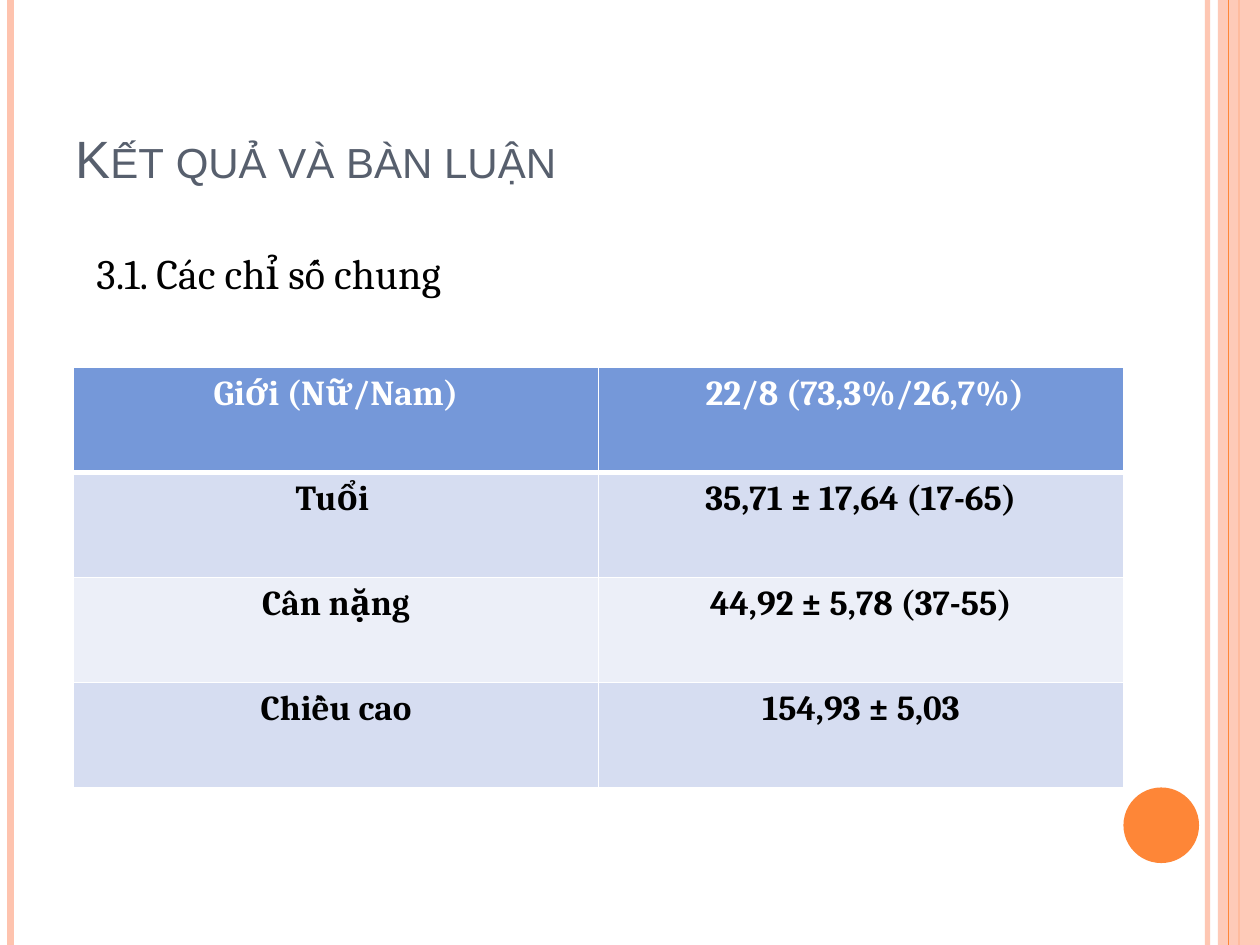
from dataclasses import dataclass

from lxml.etree import SubElement
from pptx import Presentation
from pptx.dml.color import RGBColor
from pptx.enum.shapes import MSO_CONNECTOR, MSO_SHAPE
from pptx.enum.text import MSO_ANCHOR, PP_ALIGN
from pptx.oxml.ns import qn
from pptx.util import Inches, Pt


@dataclass(frozen=True)
class Theme:
    peach: str = "FEC3AE"
    orange: str = "FE8637"
    slate: str = "575F6D"
    blue: str = "7598D9"
    bands: tuple = ("D6DDF1", "ECEFF8")
    white: str = "FFFFFF"
    black: str = "000000"
    head: str = "Arial"
    body: str = "Cambria"
    title: int = 30
    sub: int = 24
    cell: int = 20


@dataclass(frozen=True)
class Rule:
    col: int
    color: str
    width: float
    alpha: int = 100


@dataclass(frozen=True)
class Box:
    col: float
    row: float
    wide: float
    high: float

    def area(self) -> tuple:
        return tuple(unit(n) for n in (self.col, self.row, self.wide, self.high))


THEME = Theme()
COLS, ROWS = 120, 90  # grid of twelfths of an inch
BACK = (Rule(115, THEME.peach, 3, 93), Rule(1, THEME.peach, 4.5),
        Rule(118, THEME.orange, 1.5))
FRONT = (Rule(117, THEME.orange, 0.75),)
DATA = (
    ("Giới (Nữ/Nam)", " 22/8 (73,3%/26,7%)"),
    ("Tuổi ", "35,71 ± 17,64 (17-65)"),
    ("Cân nặng", "44,92 ± 5,78 (37-55)"),
    ("Chiều cao", "154,93 ± 5,03"),
)


def unit(n: float) -> int:
    return Inches(n / 12)


def rgb(color: str) -> RGBColor:
    return RGBColor.from_string(color)


def fade(props, alpha: int) -> None:
    """Set the opacity of the first solid colour, in percent."""
    if alpha < 100:
        tint = next(props.iter(qn("a:srgbClr")))
        SubElement(tint, qn("a:alpha"), val=str(alpha * 1000))


def add_rule(slide, rule: Rule) -> None:
    x = unit(rule.col)
    line = slide.shapes.add_connector(MSO_CONNECTOR.STRAIGHT, x, 0, x, unit(ROWS))
    line.line.color.rgb = rgb(rule.color)
    line.line.width = Pt(rule.width)
    props = line._element.spPr
    fade(props, rule.alpha)
    SubElement(props, qn("a:effectLst"))


def add_solid(slide, kind: MSO_SHAPE, box: Box, color: str, alpha: int = 100) -> None:
    shape = slide.shapes.add_shape(kind, *box.area())
    shape.shadow.inherit = False
    shape.fill.solid()
    shape.fill.fore_color.rgb = rgb(color)
    shape.line.fill.background()
    fade(shape._element.spPr, alpha)


def style(run, face: str, size: int, color: str, bold: bool = False) -> None:
    font = run.font
    font.name, font.size, font.bold = face, Pt(size), bold
    font.color.rgb = rgb(color)


def add_text(slide, box: Box, text: str, face: str, size: int, color: str,
             anchor=MSO_ANCHOR.TOP):
    frame = slide.shapes.add_textbox(*box.area()).text_frame
    frame.word_wrap = True
    frame.vertical_anchor = anchor
    frame.text = text
    run = frame.paragraphs[0].runs[0]
    style(run, face, size, color)
    return run


def edge(cell, head: bool) -> None:
    """Draw white cell borders, heavier below the header."""
    props = cell._tc.get_or_add_tcPr()
    for spot, side in enumerate("LRTB"):
        wide = 3 if head and side == "B" else 1
        line = props.makeelement(qn(f"a:ln{side}"), {"w": str(Pt(wide))})
        fill = SubElement(line, qn("a:solidFill"))
        SubElement(fill, qn("a:srgbClr"), val=THEME.white)
        props.insert(spot, line)


def add_grid(slide, box: Box, data: tuple) -> None:
    table = slide.shapes.add_table(len(data), len(data[0]), *box.area()).table
    for r, texts in enumerate(data):
        head = r == 0
        for c, text in enumerate(texts):
            cell = table.cell(r, c)
            cell.fill.solid()
            cell.fill.fore_color.rgb = rgb(
                THEME.blue if head else THEME.bands[(r - 1) % 2])
            edge(cell, head)
            cell.text_frame.text = text
            para = cell.text_frame.paragraphs[0]
            para.alignment = PP_ALIGN.CENTER
            style(para.runs[0], THEME.body, THEME.cell,
                  THEME.white if head else THEME.black, True)


def main() -> None:
    deck = Presentation()
    deck.slide_width, deck.slide_height = unit(COLS), unit(ROWS)
    slide = deck.slides.add_slide(deck.slide_layouts[6])

    # Side stripes and disc
    for rule in BACK:
        add_rule(slide, rule)
    add_solid(slide, MSO_SHAPE.RECTANGLE, Box(116, 0, 4, ROWS), THEME.peach, 87)
    for rule in FRONT:
        add_rule(slide, rule)
    add_solid(slide, MSO_SHAPE.OVAL, Box(107, 75, 7.2, 7.2), THEME.orange)

    # Title in small capitals
    title = add_text(slide, Box(6, 3.6, 98, 15), "Kết quả và bàn luận",
                     THEME.head, THEME.title, THEME.slate, MSO_ANCHOR.BOTTOM)
    title.font._element.set("cap", "small")

    # Table and its heading
    add_grid(slide, Box(7, 35, 100, 40), DATA)
    add_text(slide, Box(8, 23, 63, 6), "3.1. Các chỉ số chung",
             THEME.body, THEME.sub, THEME.black)
    deck.save("out.pptx")


if __name__ == "__main__":
    main()
